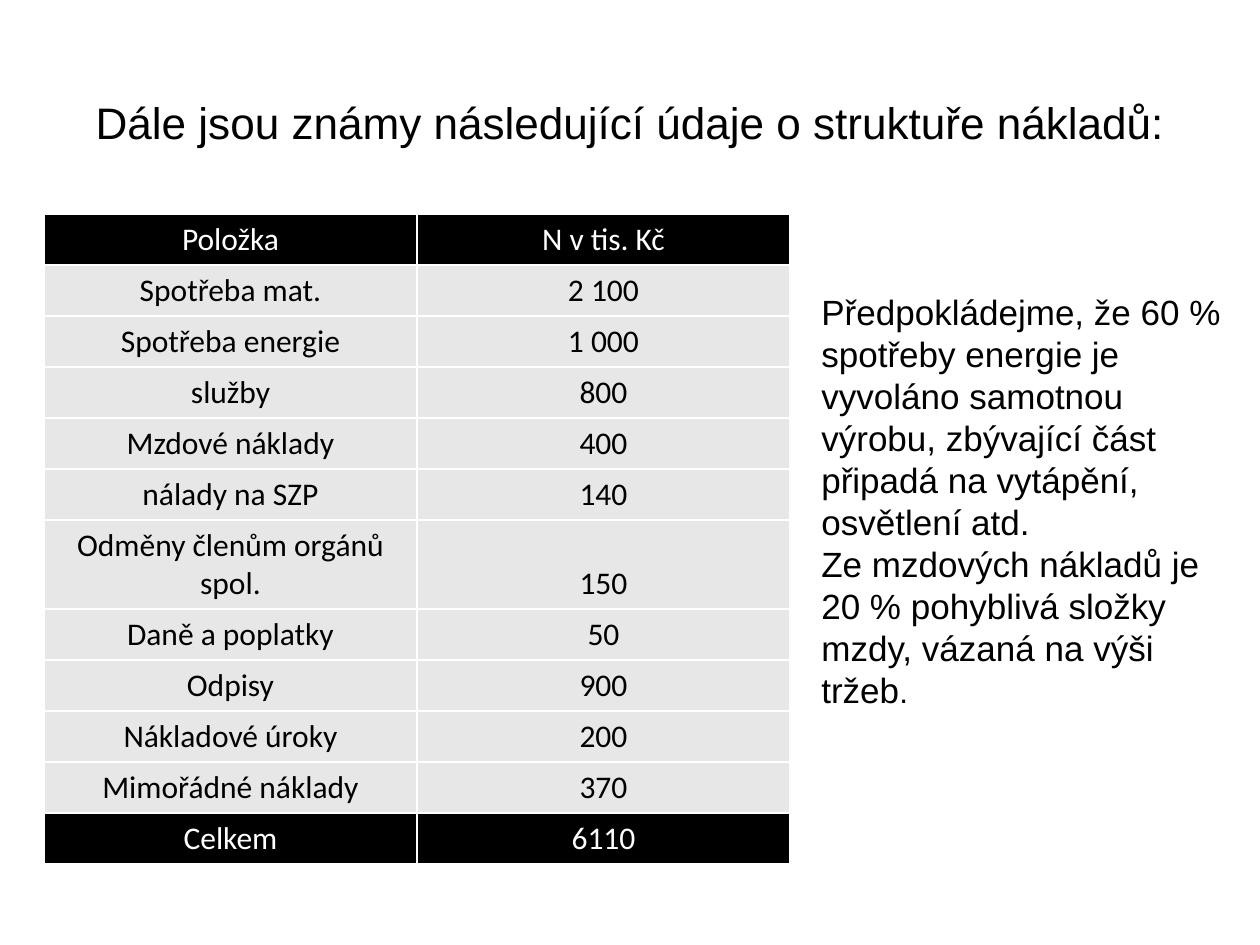
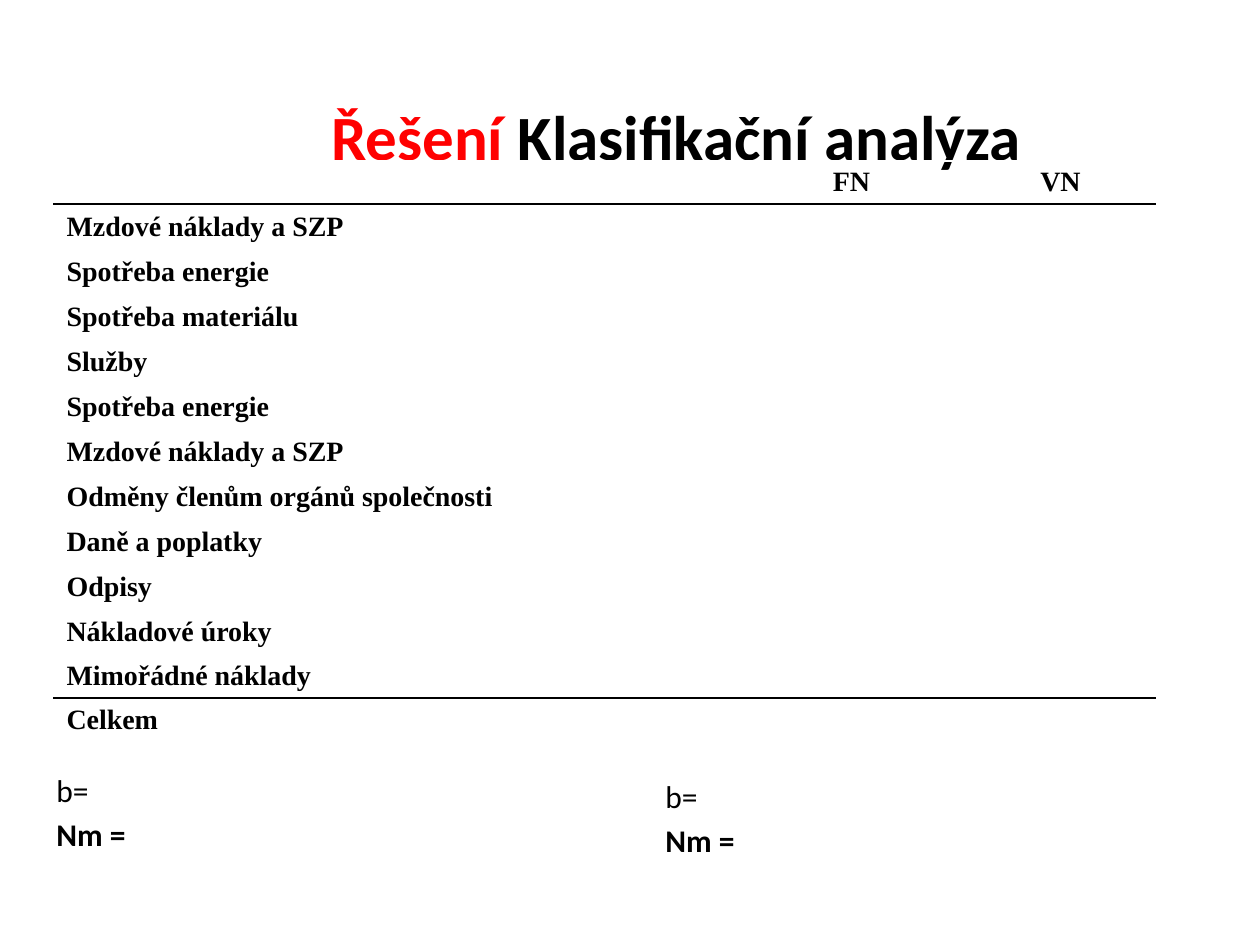
from typing import NamedTuple

from lxml import etree
from pptx import Presentation
from pptx import util as u
from pptx.dml.color import RGBColor
from pptx.enum import text
from pptx.oxml import ns

BLACK, WHITE, GREY, RED = "000000", "FFFFFF", "E7E7E7", "FF0000"
SCALE = 914400 / 126
LEFT, CENTER, JUSTIFY = text.PP_ALIGN.LEFT, text.PP_ALIGN.CENTER, text.PP_ALIGN.JUSTIFY
TOP, MIDDLE, BOTTOM = text.MSO_ANCHOR.TOP, text.MSO_ANCHOR.MIDDLE, text.MSO_ANCHOR.BOTTOM


class Style(NamedTuple):
    font: str
    size: float
    color: str = BLACK
    bold: bool = False
    align: text.PP_ALIGN = LEFT


class Span(NamedTuple):
    words: str
    color: str | None = None
    size: float | None = None


class Line(NamedTuple):
    spans: list[Span]
    style: Style
    space_before: float = 0
    hanging: int = 0


class Box(NamedTuple):
    left: int
    top: int
    width: int
    height: int


class Cost(NamedTuple):
    item: str
    amount: str


COSTS = [
    Cost("Položka", "N v tis. Kč"),
    Cost("Spotřeba mat.", "2 100"),
    Cost("Spotřeba energie", "1 000"),
    Cost("služby", "800"),
    Cost("Mzdové náklady", "400"),
    Cost("nálady na SZP", "140"),
    Cost("Odměny členům orgánů spol.", "150"),
    Cost("Daně a poplatky", "50"),
    Cost("Odpisy", "900"),
    Cost("Nákladové úroky", "200"),
    Cost("Mimořádné náklady", "370"),
    Cost("Celkem", "6110"),
]
CLASSIFIED = [
    "Mzdové náklady a SZP", "Spotřeba energie", "Spotřeba materiálu", "Služby",
    "Spotřeba energie", "Mzdové náklady a SZP", "Odměny členům orgánů společnosti",
    "Daně a poplatky", "Odpisy", "Nákladové úroky", "Mimořádné náklady", "Celkem",
]
ASSUMPTIONS = (
    "Předpokládejme, že 60 % spotřeby energie je vyvoláno samotnou výrobu, "
    "zbývající část připadá na vytápění, osvětlení atd. \n"
    "Ze mzdových nákladů je \n20 % pohyblivá složky mzdy, vázaná na výši tržeb"
)


def px(length: float) -> u.Emu:
    return u.Emu(round(length * SCALE))


def rgb(color: str) -> RGBColor:
    return RGBColor.from_string(color)


def apply_style(paragraph, style: Style) -> None:
    paragraph.alignment = style.align
    paragraph.font.name = style.font
    paragraph.font.size = u.Pt(style.size)
    paragraph.font.bold = style.bold
    paragraph.font.color.rgb = rgb(style.color)


def add_text(slide, box: Box, lines: list[Line], anchor=TOP, top_inset: int = 6) -> None:
    frame = slide.shapes.add_textbox(*map(px, box)).text_frame
    frame.word_wrap = True
    frame.vertical_anchor = anchor
    frame.margin_top = px(top_inset)
    for index, line in enumerate(lines):
        paragraph = frame.add_paragraph() if index else frame.paragraphs[0]
        if line.hanging:
            properties = paragraph._p.get_or_add_pPr()
            properties.set("marL", str(px(line.hanging)))
            properties.set("indent", str(-px(line.hanging)))
        paragraph.space_before = u.Pt(line.space_before)
        apply_style(paragraph, line.style)
        for span in line.spans:
            for part, words in enumerate(span.words.split("\n")):
                if part:
                    paragraph.add_line_break()
                run = paragraph.add_run()
                run.text = words
                if span.color:
                    run.font.color.rgb = rgb(span.color)
                if span.size:
                    run.font.size = u.Pt(span.size)


def add_table(slide, box: Box, columns: list[int], rows: list[int]):
    table = slide.shapes.add_table(len(rows), len(columns), *map(px, box)).table
    table.first_row = table.horz_banding = False
    for column, width in zip(table.columns, columns):
        column.width = px(width)
    for row, height in zip(table.rows, rows):
        row.height = px(height)
    return table


def set_borders(cell, sides: str, color: str) -> None:
    properties = cell._tc.get_or_add_tcPr()
    for side in sides:
        line = etree.SubElement(properties, ns.qn(f"a:ln{side}"), w=str(u.Pt(1)))
        fill = etree.SubElement(line, ns.qn("a:solidFill"))
        etree.SubElement(fill, ns.qn("a:srgbClr"), val=color)


def fill_cell(cell, words: str, style: Style) -> None:
    cell.vertical_anchor = BOTTOM
    cell.text = words
    apply_style(cell.text_frame.paragraphs[0], style)


def build_costs(slide) -> None:
    title = Style("Arial", 25.2, align=CENTER)
    add_text(slide, Box(63, 95, 1134, 123),
             [Line([Span("Dále jsou známy následující údaje o struktuře nákladů:")], title)],
             top_inset=0)
    heights = [89 if cost.item.startswith("Odměny") else 51 for cost in COSTS]
    table = add_table(slide, Box(44, 214, 746, sum(heights)), [373, 373], heights)
    for row, cost in enumerate(COSTS):
        emphasised = row in (0, len(COSTS) - 1)
        style = Style("Calibri", 18, WHITE if emphasised else BLACK, align=CENTER)
        for column, words in enumerate(cost):
            cell = table.cell(row, column)
            set_borders(cell, "LRTB", WHITE)
            cell.fill.solid()
            cell.fill.fore_color.rgb = rgb(BLACK if emphasised else GREY)
            fill_cell(cell, words, style)
    add_text(slide, Box(809, 284, 451, 432),
             [Line([Span(ASSUMPTIONS), Span(".", size=18)], Style("Arial", 20))])


def build_classification(slide) -> None:
    title = Style("Calibri", 36, bold=True, align=CENTER)
    add_text(slide, Box(105, 71, 1142, 129),
             [Line([Span("Řešení ", RED), Span("Klasifikační analýza")], title)], MIDDLE)
    label = Style("Times New Roman", 16, bold=True)
    heights = [43] + [45] * 10 + [44, 44]
    table = add_table(slide, Box(54, 161, 1101, sum(heights)),
                      [199, 228, 256, 229, 189], heights)
    last = len(CLASSIFIED)
    for row in range(last + 1):
        sides = ("T" if row in (1, last) else "") + ("B" if row in (0, last - 1) else "")
        for column in range(5):
            cell = table.cell(row, column)
            set_borders(cell, sides, BLACK)
            cell.fill.background()
            cell.margin_top = cell.margin_bottom = 0
    for column, heading in enumerate(("FN", "VN"), start=3):
        fill_cell(table.cell(0, column), heading, label._replace(align=CENTER))
        table.cell(0, column).margin_bottom = px(6)
    for row, item in enumerate(CLASSIFIED, start=1):
        cell = table.cell(row, 0)
        cell.merge(table.cell(row, 1 if row == 1 else 2))
        fill_cell(cell, item, label)
        cell.margin_bottom = px(6)
    formula = Style("Calibri", 18, align=JUSTIFY)
    for left, top in ((44, 765), (653, 771)):
        add_text(slide, Box(left, top, 630, 97), [
            Line([Span("b=")], formula, hanging=48),
            Line([Span("Nm =")], formula._replace(bold=True), 3.6, 48),
        ])


def main() -> None:
    deck = Presentation()
    deck.slide_width, deck.slide_height = px(1260), px(945)
    for build in (build_costs, build_classification):
        build(deck.slides.add_slide(deck.slide_layouts[6]))
    deck.save("out.pptx")


if __name__ == "__main__":
    main()
